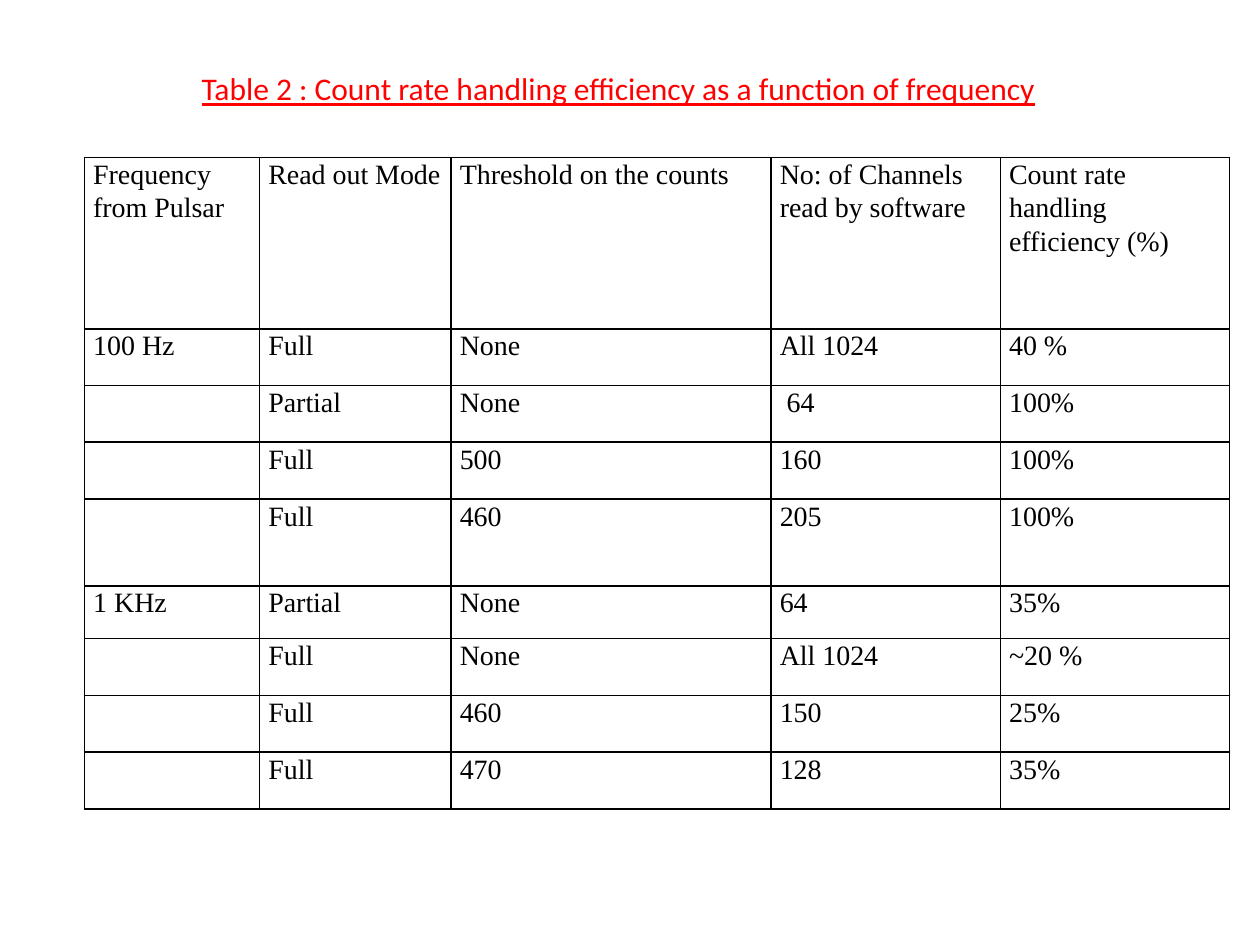
from dataclasses import dataclass

from lxml.etree import SubElement
from pptx import Presentation
from pptx.dml.color import RGBColor
from pptx.enum.text import MSO_ANCHOR, PP_ALIGN
from pptx.oxml.ns import qn
from pptx.util import Inches, Pt


@dataclass(frozen=True)
class Theme:
    title_color: str = "FF0000"
    text_color: str = "000000"
    border_color: str = "000000"
    title_font: str = "Calibri"
    table_font: str = "Times New Roman"
    title_size: int = 18
    table_size: int = 16
    border_width: int = 1


THEME = Theme()

TITLE = "Table 2 : Count rate handling efficiency as a function of frequency"
COLUMN_WIDTHS = [1.39, 1.52, 2.54, 1.82, 1.82]
ROW_HEIGHTS = [1.36, 0.45, 0.45, 0.45, 0.69, 0.42, 0.45, 0.45, 0.45]
ROWS = [
    ["Frequency\nfrom Pulsar", "Read out Mode", "Threshold on the counts",
     "No: of Channels\nread by software", "Count rate handling efficiency (%)"],
    ["100 Hz", "Full", "None", "All 1024", "40 %"],
    ["", "Partial", "None", " 64", "100%"],
    ["", "Full", "500", "160", "100%"],
    ["", "Full", "460", "205", "100%"],
    ["1 KHz", "Partial", "None", "64", "35%"],
    ["", "Full", "None", "All 1024", "~20 %"],
    ["", "Full", "460", "150", "25%"],
    ["", "Full", "470", "128", "35%"],
]


def write_text(text_frame, text, *, font, size, color, underline=False,
               line_spacing=1.0):
    """Fill a text frame, one paragraph per line of text."""
    text_frame.text = text
    for paragraph in text_frame.paragraphs:
        paragraph.alignment = PP_ALIGN.LEFT
        paragraph.line_spacing = line_spacing
        paragraph.font.size = Pt(size)
        for run in paragraph.runs:
            run.font.name = font
            run.font.size = Pt(size)
            run.font.underline = underline
            run.font.color.rgb = RGBColor.from_string(color)


def add_title(slide):
    title = slide.shapes.title
    title.left, title.top = Inches(1.5), Inches(0.5)
    title.width, title.height = Inches(6.91), Inches(0.4)
    title.text_frame.vertical_anchor = MSO_ANCHOR.TOP
    write_text(title.text_frame, TITLE, font=THEME.title_font,
               size=THEME.title_size, color=THEME.title_color, underline=True)


def set_borders(cell):
    """Draw a solid line on all four sides of a cell."""
    properties = cell._tc.get_or_add_tcPr()
    for index, side in enumerate(("a:lnL", "a:lnR", "a:lnT", "a:lnB")):
        line = SubElement(properties, qn(side), w=str(Pt(THEME.border_width)))
        fill = SubElement(line, qn("a:solidFill"))
        SubElement(fill, qn("a:srgbClr"), val=THEME.border_color)
        properties.insert(index, line)  # lines come before the cell's fill


def format_cell(cell, text):
    cell.margin_left = cell.margin_right = Inches(0.07)
    cell.margin_top = cell.margin_bottom = 0
    cell.fill.background()
    set_borders(cell)
    write_text(cell.text_frame, text, font=THEME.table_font,
               size=THEME.table_size, color=THEME.text_color,
               line_spacing=1.07)


def add_efficiency_table(slide):
    frame = slide.shapes.add_table(
        len(ROWS), len(COLUMN_WIDTHS), Inches(0.67), Inches(1.25),
        Inches(sum(COLUMN_WIDTHS)), Inches(sum(ROW_HEIGHTS)))
    table = frame.table
    table.first_row = table.horz_banding = False
    for column, width in zip(table.columns, COLUMN_WIDTHS):
        column.width = Inches(width)
    for row, height, texts in zip(table.rows, ROW_HEIGHTS, ROWS):
        row.height = Inches(height)
        for cell, text in zip(row.cells, texts):
            format_cell(cell, text)


def main():
    presentation = Presentation()
    presentation.slide_width, presentation.slide_height = Inches(10), Inches(7.5)
    # Title Only layout
    slide = presentation.slides.add_slide(presentation.slide_layouts[5])
    add_title(slide)
    add_efficiency_table(slide)
    presentation.save("out.pptx")


if __name__ == "__main__":
    main()
